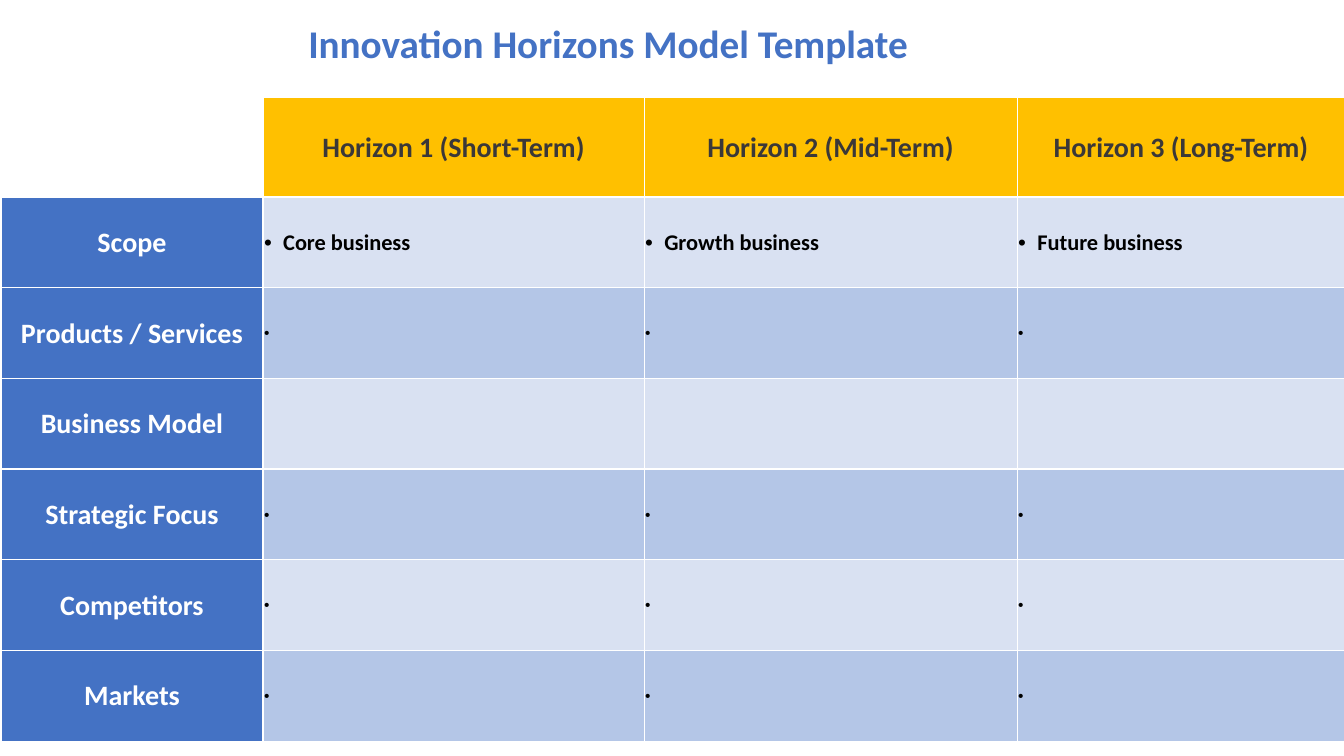
from dataclasses import dataclass

from lxml.etree import SubElement
from pptx import Presentation
from pptx.dml.color import RGBColor
from pptx.enum.text import MSO_ANCHOR, PP_ALIGN
from pptx.oxml.ns import qn
from pptx.util import Inches, Pt

COLORS = {
    "blue": "4472C4",
    "amber": "FFC000",
    "charcoal": "3B3838",
    "pale": "D9E1F2",
    "sky": "B4C6E7",
    "white": "FFFFFF",
    "black": "000000",
}
COLUMN_WIDTHS = [0.23, 1.05, 1.26, 0.05, 3.78, 3.7, 3.25]
ROW_HEIGHTS = [0.64, 0.17] + [0.9] * 6
LABEL_SPAN = 4
HEADER_SPAN = 2
CELL_FORMAT = {
    "vertical_anchor": MSO_ANCHOR.MIDDLE,
    "margin_left": Inches(0.01),
    "margin_top": Inches(0.01),
    "margin_right": Inches(0.01),
    "margin_bottom": 0,
}


@dataclass(frozen=True)
class CellStyle:
    size: int
    color: str
    bullet: bool = False


@dataclass(frozen=True)
class Aspect:
    name: str
    entries: tuple[str, str, str] = (" ", " ", " ")


HEADER = CellStyle(20, "charcoal")
LABEL = CellStyle(20, "white")
ENTRY = CellStyle(16, "black", bullet=True)
OPEN_ENTRY = CellStyle(11, "black", bullet=True)

HORIZONS = [
    "Horizon 1 (Short-Term)",
    "Horizon 2 (Mid-Term)",
    "Horizon 3 (Long-Term)",
]
ASPECTS = [
    Aspect("Scope", ("Core business", "Growth business", "Future business")),
    Aspect("Products / Services"),
    Aspect("Business Model", ("", "", "")),
    Aspect("Strategic Focus"),
    Aspect("Competitors"),
    Aspect("Markets"),
]


def rgb(name: str) -> RGBColor:
    return RGBColor.from_string(COLORS[name])


def add_bullet(paragraph) -> None:
    properties = paragraph._p.get_or_add_pPr()
    properties.set("marL", str(Inches(0.19)))
    properties.set("indent", str(-Inches(0.19)))
    SubElement(properties, qn("a:buFont"), typeface="Arial")
    SubElement(properties, qn("a:buChar"), char="•")


def write(paragraph, text: str, size: int, color: str) -> None:
    run = paragraph.add_run()
    run.text = text
    font_format = {"name": "Calibri", "size": Pt(size), "bold": True}
    for attribute, value in font_format.items():
        setattr(run.font, attribute, value)
    run.font.color.rgb = rgb(color)


def prepare_cell(cell, sides: str) -> None:
    for attribute, value in CELL_FORMAT.items():
        setattr(cell, attribute, value)
    properties = cell._tc.get_or_add_tcPr()
    for side in sides:
        line = SubElement(properties, qn(f"a:ln{side}"), w=str(Pt(1)))
        fill = SubElement(line, qn("a:solidFill"))
        SubElement(fill, qn("a:srgbClr"), val=COLORS["white"])
    cell.fill.background()
    SubElement(cell.text_frame.paragraphs[0]._p, qn("a:endParaRPr"), sz="800")


def fill_cell(cell, text: str, fill: str, style: CellStyle) -> None:
    cell.fill.solid()
    cell.fill.fore_color.rgb = rgb(fill)
    if not text:
        return
    paragraph = cell.text_frame.paragraphs[0]
    if style.bullet:
        add_bullet(paragraph)
    else:
        paragraph.alignment = PP_ALIGN.CENTER
    write(paragraph, text, style.size, style.color)


def add_title(slide) -> None:
    title = slide.shapes.add_textbox(
        Inches(2.96), Inches(0.15), Inches(10.27), Inches(0.6)
    )
    title.text_frame.word_wrap = True
    title.text_frame.vertical_anchor = MSO_ANCHOR.MIDDLE
    paragraph = title.text_frame.paragraphs[0]
    paragraph.line_spacing = 0.9
    write(paragraph, "Innovation Horizons Model Template", 28, "blue")


def add_horizons_table(slide) -> None:
    table = slide.shapes.add_table(
        len(ROW_HEIGHTS), len(COLUMN_WIDTHS), Inches(0.01), Inches(0.97),
        Inches(sum(COLUMN_WIDTHS)), Inches(sum(ROW_HEIGHTS)),
    ).table
    table.first_row = False
    table.horz_banding = False
    for column, width in zip(table.columns, COLUMN_WIDTHS):
        column.width = Inches(width)
    for row, height in zip(table.rows, ROW_HEIGHTS):
        row.height = Inches(height)
    for cell in table.iter_cells():
        prepare_cell(cell, "LRTB")

    for column, horizon in enumerate(HORIZONS, LABEL_SPAN):
        header = table.cell(0, column)
        header.merge(table.cell(HEADER_SPAN - 1, column))
        fill_cell(header, horizon, "amber", HEADER)

    for row, aspect in enumerate(ASPECTS, HEADER_SPAN):
        label = table.cell(row, 0)
        label.merge(table.cell(row, LABEL_SPAN - 1))
        fill_cell(label, aspect.name, "blue", LABEL)
        band = "sky" if row % 2 else "pale"
        for column, entry in enumerate(aspect.entries, LABEL_SPAN):
            style = ENTRY if entry.strip() else OPEN_ENTRY
            fill_cell(table.cell(row, column), entry, band, style)


def main() -> None:
    presentation = Presentation()
    presentation.slide_width = Inches(13.33)
    presentation.slide_height = Inches(7.5)
    slide = presentation.slides.add_slide(presentation.slide_layouts[6])
    add_title(slide)
    add_horizons_table(slide)
    presentation.save("out.pptx")


if __name__ == "__main__":
    main()
